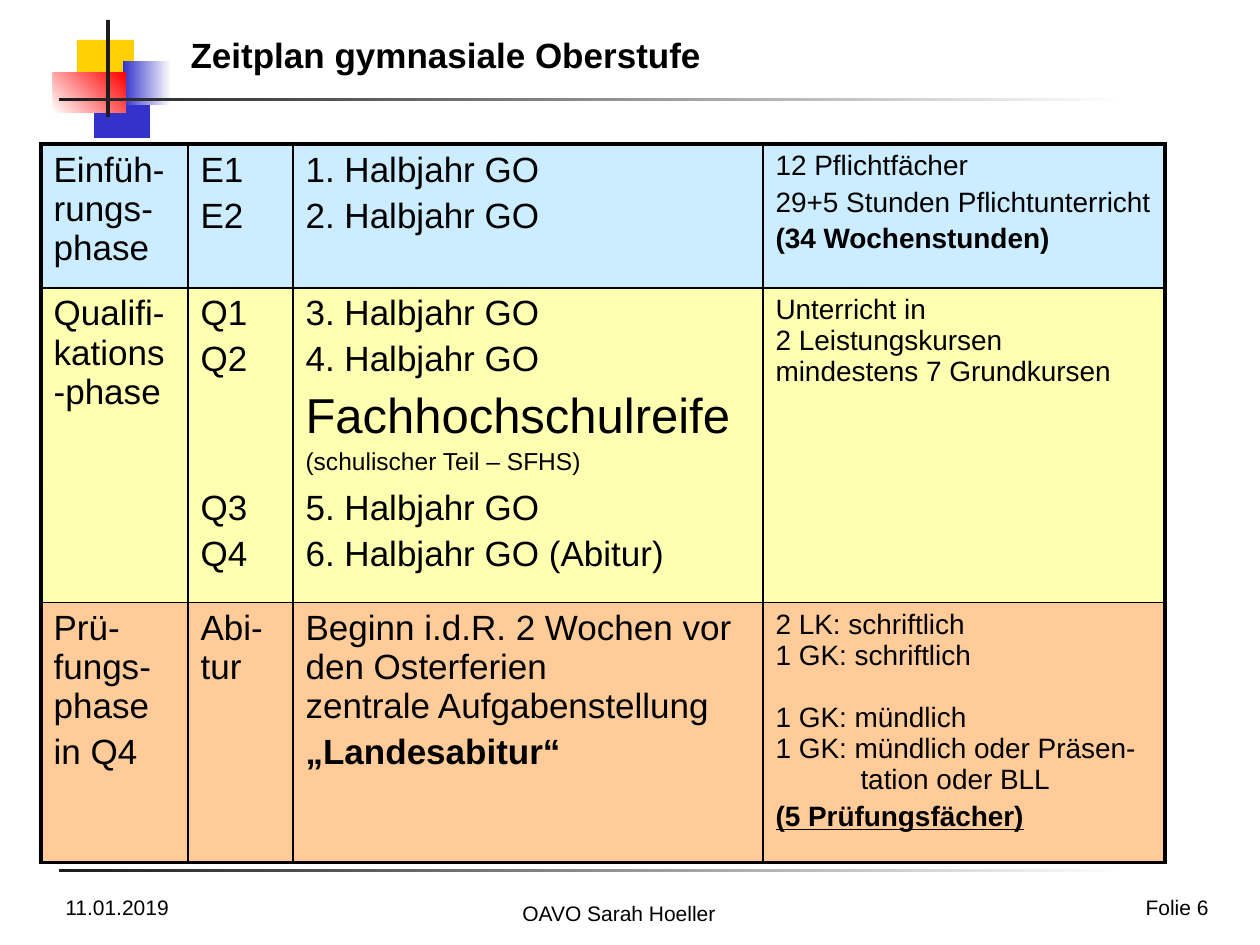
from copy import deepcopy

from lxml import etree
from pptx import Presentation
from pptx import util as u
from pptx.dml.color import RGBColor
from pptx.enum import shapes, text
from pptx.oxml import ns

PX = 914400 / 126
FONT = "Arial"
BLACK = RGBColor(0x00, 0x00, 0x00)
INK = RGBColor(0x1C, 0x1C, 0x1C)
WHITE = RGBColor(0xFF, 0xFF, 0xFF)
GOLD = RGBColor(0xFF, 0xCF, 0x01)
BLUE = RGBColor(0x33, 0x33, 0xCC)
RED = RGBColor(0xFF, 0x00, 0x00)
PALE_BLUE = RGBColor(0xCC, 0xEC, 0xFF)
YELLOW = RGBColor(0xFF, 0xFF, 0x66)
ORANGE = RGBColor(0xFF, 0xCC, 0x99)

# left, top, width, height, colours (two make a gradient), gradient angle
DECORATION = [
    (77, 40, 57, 44, [GOLD], 0),
    (107, 91, 43, 44, [GOLD, WHITE], 0),
    (94, 94, 56, 44, [BLUE], 0),
    (123, 61, 48, 44, [BLUE, WHITE], 0),
    (53, 73, 73, 40, [WHITE, RED], 45),
    (106, 20, 4, 97, [INK], 0),
    (59, 98, 1067, 3, [INK, WHITE], 0),
    (59, 869, 1067, 3, [INK, WHITE], 0),
]

COLUMN_WIDTHS = [147, 105, 470, 402]
ROW_HEIGHTS = [144, 194, 120, 260]
# fill and alpha of each row
ROW_FILLS = [(PALE_BLUE, 100), (YELLOW, 50), (YELLOW, 50), (ORANGE, 100)]
OUTER, INNER, NONE = 2.25, 1, 0
ROW_LINES = [OUTER, INNER, NONE, INNER, OUTER]
COLUMN_LINES = [OUTER, INNER, INNER, INNER, OUTER]

SMALL = {"size": 16}
# each cell is a list of paragraphs: text and format; \v is a line break
SCHEDULE = [
    [
        [("Einfüh-rungs-phase", {})],
        [("E1", {}), ("E2", {})],
        [("1. Halbjahr GO", {}), ("2. Halbjahr GO", {})],
        [("12 Pflichtfächer", SMALL),
         ("29+5 Stunden Pflichtunterricht", SMALL),
         ("(34 Wochenstunden)", {"size": 16, "bold": True})],
    ],
    [
        [("Qualifi-kations-phase", {})],
        [("Q1", {}), ("Q2", {})],
        [("3. Halbjahr GO", {}), ("4. Halbjahr GO", {}),
         ("Fachhochschulreife", {"size": 28}),
         ("(schulischer Teil – SFHS)", {"size": 14})],
        [("Unterricht in\v2 Leistungskursen\vmindestens 7 Grundkursen", SMALL)],
    ],
    [
        [],
        [("Q3", {}), ("Q4", {})],
        [("5. Halbjahr GO", {}), ("6. Halbjahr GO (Abitur)", {})],
        [],
    ],
    [
        [("Prü-fungs-phase", {}), ("in Q4", {})],
        [("Abi-tur", {})],
        [("Beginn i.d.R. 2 Wochen vor den Osterferien\v"
          "zentrale Aufgabenstellung", {}),
         ("„Landesabitur“", {"bold": True})],
        [("2 LK: schriftlich\v1 GK: schriftlich", SMALL),
         ("1 GK: mündlich\v1 GK: mündlich oder Präsen-",
          {"size": 16, "before": 17.8}),
         ("tation oder BLL", {"size": 16, "before": 0, "indent": 85}),
         ("(5 Prüfungsfächer)", {"size": 16, "bold": True, "underline": True})],
    ],
]


def px(length):
    return u.Emu(round(length * PX))


def write(paragraph, words, size=20, bold=False, underline=False,
          align=text.PP_ALIGN.LEFT, before=0, indent=0):
    paragraph.text = words
    paragraph.alignment = align
    paragraph.space_before = u.Pt(before)
    if indent:
        paragraph._p.get_or_add_pPr().set("marL", str(px(indent)))
    for run in paragraph.runs:
        run.font.name = FONT
        run.font.size = u.Pt(size)
        run.font.bold = bold
        run.font.underline = underline
        run.font.color.rgb = BLACK
    for line_break in paragraph._p.findall(ns.qn("a:br")):
        line_break.insert(0, deepcopy(paragraph.runs[0]._r.rPr))


def add_rectangle(slide, left, top, width, height, colors, angle):
    shape = slide.shapes.add_shape(
        shapes.MSO_SHAPE.RECTANGLE, px(left), px(top), px(width), px(height))
    shape.shadow.inherit = False
    shape.line.fill.background()
    if len(colors) == 1:
        shape.fill.solid()
        shape.fill.fore_color.rgb = colors[0]
        return
    shape.fill.gradient()
    shape.fill.gradient_angle = angle
    for stop, color in zip(shape.fill.gradient_stops, colors):
        stop.color.rgb = color


def add_label(slide, left, top, width, height, words, **style):
    box = slide.shapes.add_textbox(px(left), px(top), px(width), px(height))
    box.text_frame.word_wrap = True
    write(box.text_frame.paragraphs[0], words, size=12, **style)


def set_title(slide, words):
    title = slide.shapes.title
    title.left, title.top, title.width, title.height = map(px, (178, 33, 906, 49))
    title.text_frame.vertical_anchor = text.MSO_ANCHOR.BOTTOM
    write(title.text_frame.paragraphs[0], words, bold=True)


def set_fill(cell, color, alpha):
    cell.fill.solid()
    cell.fill.fore_color.rgb = color
    if alpha < 100:
        color_element = cell._tc.tcPr.find(".//" + ns.qn("a:srgbClr"))
        etree.SubElement(color_element, ns.qn("a:alpha"), val=str(alpha * 1000))


def set_borders(cell, **widths):
    """Put border lines, named by side (L, R, T, B), ahead of the cell's fill."""
    for index, (side, width) in enumerate(widths.items()):
        line = etree.Element(ns.qn("a:ln" + side), w=str(u.Pt(width)))
        if width:
            fill = etree.SubElement(line, ns.qn("a:solidFill"))
            etree.SubElement(fill, ns.qn("a:srgbClr"), val=str(BLACK))
        else:
            etree.SubElement(line, ns.qn("a:noFill"))
        cell._tc.get_or_add_tcPr().insert(index, line)


def fill_cell(cell, paragraphs):
    frame = cell.text_frame
    for index, (words, style) in enumerate(paragraphs):
        paragraph = frame.add_paragraph() if index else frame.paragraphs[0]
        before = 0.2 * style.get("size", 20) if index else 0
        write(paragraph, words, **{"before": before, **style})


def add_schedule(slide):
    table = slide.shapes.add_table(
        len(ROW_HEIGHTS), len(COLUMN_WIDTHS), px(41), px(144),
        px(sum(COLUMN_WIDTHS)), px(sum(ROW_HEIGHTS))).table
    table.first_row = table.horz_banding = False
    for column, width in zip(table.columns, COLUMN_WIDTHS):
        column.width = px(width)
    for r, (row, height) in enumerate(zip(table.rows, ROW_HEIGHTS)):
        row.height = px(height)
        for c, cell in enumerate(row.cells):
            fill_cell(cell, SCHEDULE[r][c])
            set_fill(cell, *ROW_FILLS[r])
            set_borders(cell, L=COLUMN_LINES[c], R=COLUMN_LINES[c + 1],
                        T=ROW_LINES[r], B=ROW_LINES[r + 1])


def main():
    presentation = Presentation()
    presentation.slide_width, presentation.slide_height = px(1260), px(945)
    slide = presentation.slides.add_slide(presentation.slide_layouts[5])
    for rectangle in DECORATION:
        add_rectangle(slide, *rectangle)
    set_title(slide, "Zeitplan gymnasiale Oberstufe")
    add_schedule(slide)
    add_label(slide, 53, 888, 294, 38, "11.01.2019")
    add_label(slide, 419, 894, 400, 31, "OAVO Sarah Hoeller",
              align=text.PP_ALIGN.CENTER)
    add_label(slide, 927, 888, 294, 28, "Folie 6", align=text.PP_ALIGN.RIGHT)
    presentation.save("out.pptx")


if __name__ == "__main__":
    main()
